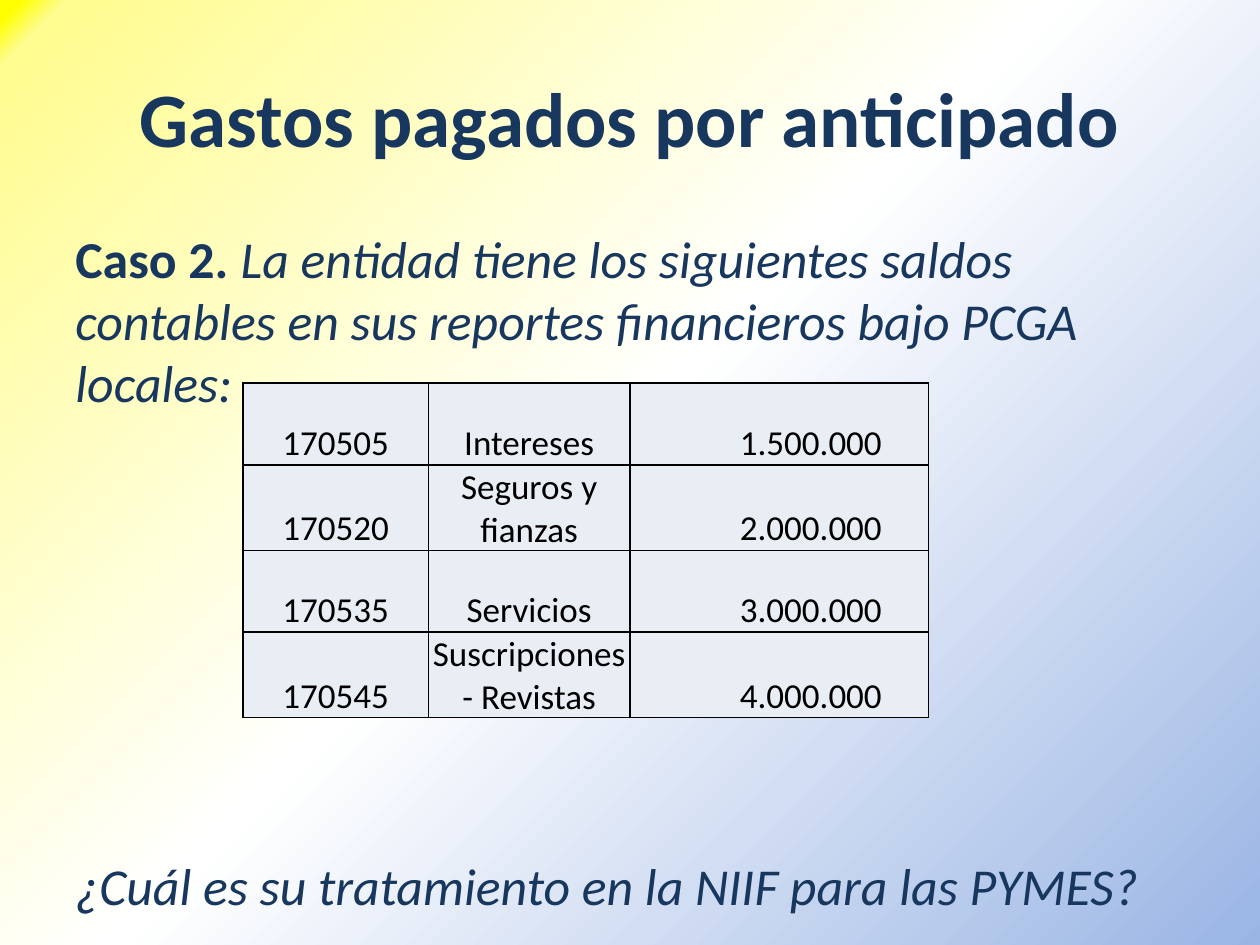
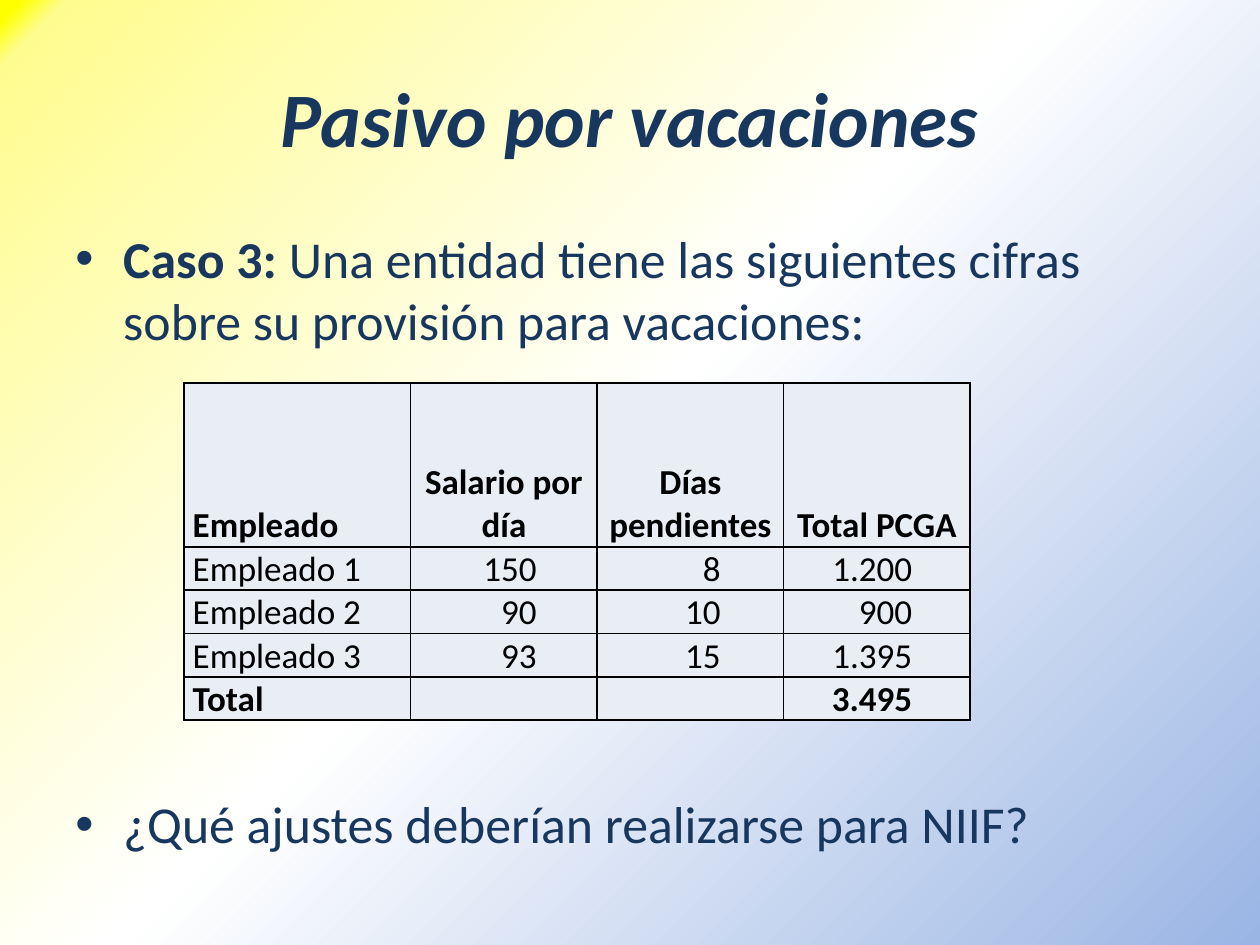
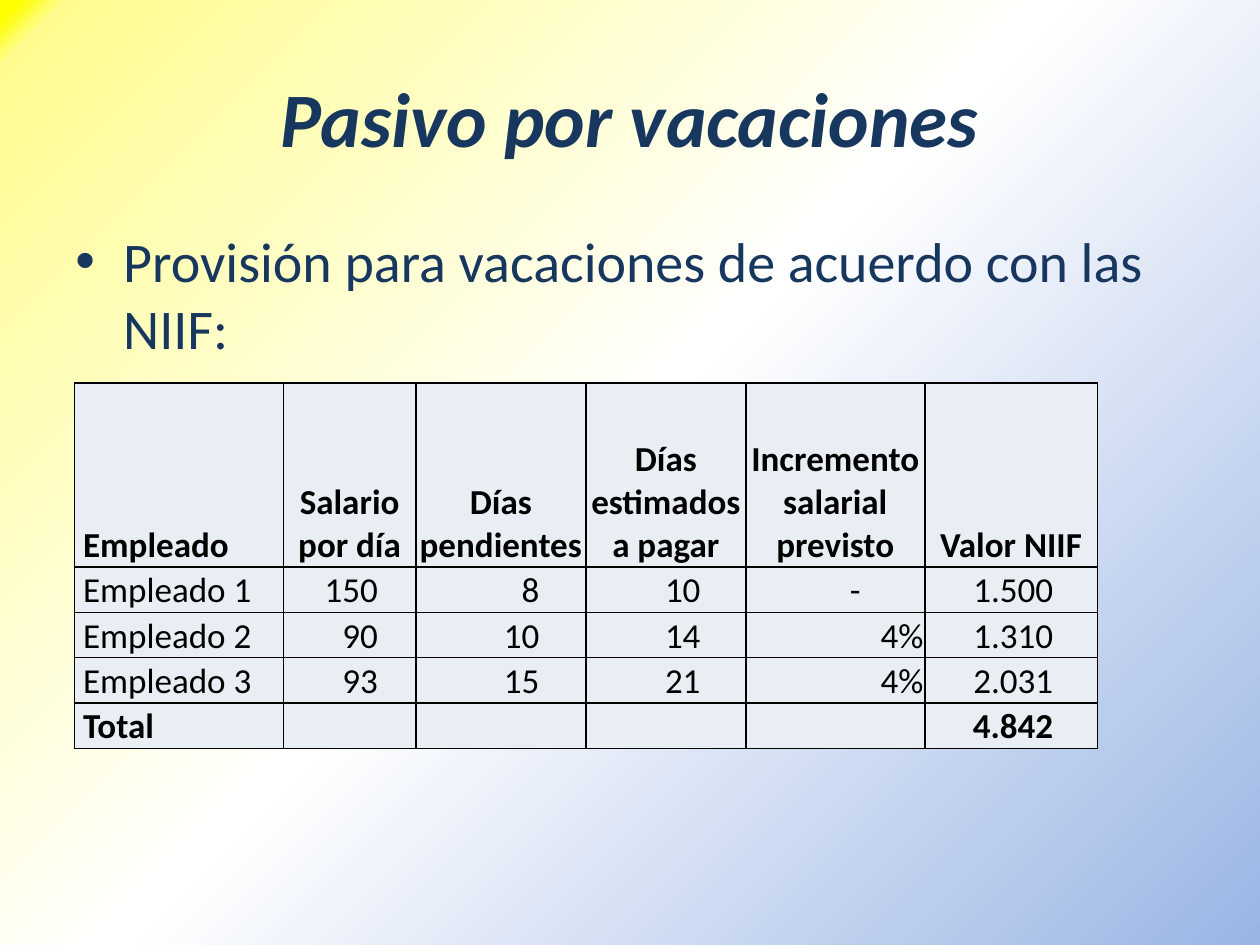
from dataclasses import dataclass
from typing import NamedTuple

from lxml.etree import SubElement
from pptx import Presentation
from pptx.dml.color import RGBColor
from pptx.enum.text import MSO_ANCHOR, PP_ALIGN
from pptx.oxml.ns import qn
from pptx.util import Inches, Pt

FONT = "Calibri"
NAVY = RGBColor(0x17, 0x37, 0x5E)
BLACK = RGBColor(0x00, 0x00, 0x00)
CELL_FILL = RGBColor(0xE9, 0xED, 0xF4)
YELLOW = RGBColor(0xFF, 0xFF, 0x00)
PALE_YELLOW = RGBColor(0xFF, 0xFC, 0x8F)
WHITE = RGBColor(0xFF, 0xFF, 0xFF)
SKY = RGBColor(0x9A, 0xB5, 0xE4)
BACKGROUND_STOPS = [(1, YELLOW), (3, PALE_YELLOW), (48, WHITE), (100, SKY)]
TABLE_TOP = 3.04
CELL_MARGIN = 0.01
LABEL_INDENT = 0.07
BULLET_INDENT = Inches(0.38)
QUESTION_GAP = Pt(252)


class Span(NamedTuple):
    text: str
    bold: bool = False
    italic: bool = False


class Column(NamedTuple):
    width: float
    align: PP_ALIGN = PP_ALIGN.CENTER
    margin: float = CELL_MARGIN


@dataclass
class Grid:
    left: float
    columns: list[Column]
    row_heights: list[float]
    rows: list[list[str]]
    has_header: bool = True


@dataclass
class CaseSlide:
    title: Span
    paragraphs: list[list[Span]]
    grid: Grid
    body_size: float = 29.6
    body_width: float = 9
    body_height: float = 4.95
    bulleted: bool = True


def label(width: float) -> Column:
    return Column(width, PP_ALIGN.LEFT, LABEL_INDENT)


def number(width: float, margin: float) -> Column:
    return Column(width, PP_ALIGN.RIGHT, margin)


VACATION_TITLE = Span("Pasivo por vacaciones", bold=True, italic=True)
CASES = [
    CaseSlide(
        Span("Gastos pagados por anticipado", bold=True),
        [
            [
                Span("Caso 2. ", bold=True),
                Span(
                    "La entidad tiene los siguientes saldos contables en sus "
                    "reportes financieros bajo PCGA locales:",
                    italic=True,
                ),
            ],
            [Span("¿Cuál es su tratamiento en la NIIF para las PYMES?", italic=True)],
        ],
        Grid(
            1.93,
            [Column(1.47), Column(1.6), number(2.37, 0.37)],
            [0.65] * 4,
            [
                ["170505", "Intereses", "1.500.000"],
                ["170520", "Seguros y fianzas", "2.000.000"],
                ["170535", "Servicios", "3.000.000"],
                ["170545", "Suscripciones - Revistas", "4.000.000"],
            ],
            has_header=False,
        ),
        body_width=9.07,
        body_height=5.31,
        bulleted=False,
    ),
    CaseSlide(
        VACATION_TITLE,
        [
            [
                Span("Caso 3: ", bold=True),
                Span("Una entidad tiene las siguientes cifras sobre su provisión para vacaciones:"),
            ],
            [Span("¿Qué ajustes deberían realizarse para NIIF?")],
        ],
        Grid(
            1.46,
            [label(1.8), number(1.48, 0.48), number(1.48, 0.5), number(1.48, 0.46)],
            [1.3] + [0.32] * 4,
            [
                ["Empleado", "Salario por día", "Días pendientes", "Total PCGA"],
                ["Empleado 1", "150", "8", "1.200"],
                ["Empleado 2", "90", "10", "900"],
                ["Empleado 3", "93", "15", "1.395"],
                ["Total", "", "", "3.495"],
            ],
        ),
    ),
    CaseSlide(
        VACATION_TITLE,
        [[Span("Provisión para vacaciones de acuerdo con las NIIF:")]],
        Grid(
            0.59,
            [
                label(1.66),
                number(1.05, 0.3),
                number(1.35, 0.37),
                number(1.27, 0.36),
                number(1.42, 0.51),
                number(1.37, 0.35),
            ],
            [1.46] + [0.36] * 4,
            [
                [
                    "Empleado",
                    "Salario por día",
                    "Días pendientes",
                    "Días estimados a pagar",
                    "Incremento salarial previsto",
                    "Valor NIIF",
                ],
                ["Empleado 1", "150", "8", "10", "-", "1.500"],
                ["Empleado 2", "90", "10", "14", "4%", "1.310"],
                ["Empleado 3", "93", "15", "21", "4%", "2.031"],
                ["Total", "", "", "", "", "4.842"],
            ],
        ),
        body_size=32,
    ),
]


def set_background(master) -> None:
    fill = master.background.fill
    fill.gradient()
    fill.gradient_angle = 315
    stops = master.element.find(".//" + qn("p:bg")).find(".//" + qn("a:gsLst"))
    for stop in list(stops):
        stops.remove(stop)
    for position, color in BACKGROUND_STOPS:
        stop = SubElement(stops, qn("a:gs"), pos=str(position * 1000))
        SubElement(stop, qn("a:srgbClr"), val=str(color))


def style_font(font, size: float, color: RGBColor, bold: bool, italic: bool = False) -> None:
    font.name = FONT
    font.size = Pt(size)
    font.color.rgb = color
    font.bold = bold
    font.italic = italic


def add_spans(paragraph, spans: list[Span], size: float) -> None:
    for span in spans:
        run = paragraph.add_run()
        run.text = span.text
        style_font(run.font, size, NAVY, span.bold, span.italic)


def add_text_frame(slide, top: float, width: float, height: float):
    shape = slide.shapes.add_textbox(Inches(0.5), Inches(top), Inches(width), Inches(height))
    shape.text_frame.word_wrap = True
    return shape.text_frame


def add_title(slide, title: Span) -> None:
    text_frame = add_text_frame(slide, 0.3, 9, 1.25)
    text_frame.vertical_anchor = MSO_ANCHOR.MIDDLE
    paragraph = text_frame.paragraphs[0]
    paragraph.alignment = PP_ALIGN.CENTER
    add_spans(paragraph, [title], 44)


def add_bullet(paragraph) -> None:
    properties = paragraph._p.get_or_add_pPr()
    properties.set("marL", str(BULLET_INDENT))
    properties.set("indent", str(-BULLET_INDENT))
    SubElement(properties, qn("a:buFont"), typeface="Arial")
    SubElement(properties, qn("a:buChar"), char="•")


def add_body(slide, case: CaseSlide) -> None:
    text_frame = add_text_frame(slide, 1.75, case.body_width, case.body_height)
    for index, spans in enumerate(case.paragraphs):
        paragraph = text_frame.add_paragraph() if index else text_frame.paragraphs[0]
        if case.bulleted:
            add_bullet(paragraph)
        if index:
            paragraph.space_before = QUESTION_GAP
        add_spans(paragraph, spans, case.body_size)


def add_borders(cell) -> None:
    properties = cell._tc.get_or_add_tcPr()
    for side in ("a:lnL", "a:lnR", "a:lnT", "a:lnB"):
        line = SubElement(properties, qn(side), w=str(Pt(1)))
        fill = SubElement(line, qn("a:solidFill"))
        SubElement(fill, qn("a:srgbClr"), val=str(BLACK))


def fill_cell(cell, text: str, column: Column, bold: bool) -> None:
    add_borders(cell)
    cell.fill.solid()
    cell.fill.fore_color.rgb = CELL_FILL
    cell.vertical_anchor = MSO_ANCHOR.BOTTOM
    is_left = column.align == PP_ALIGN.LEFT
    cell.margin_left = Inches(column.margin if is_left else CELL_MARGIN)
    cell.margin_right = Inches(CELL_MARGIN if is_left else column.margin)
    cell.margin_top = Inches(CELL_MARGIN)
    cell.margin_bottom = 0
    paragraph = cell.text_frame.paragraphs[0]
    paragraph.text = text
    paragraph.alignment = column.align
    for run in paragraph.runs:
        style_font(run.font, 20, BLACK, bold)


def add_grid(slide, grid: Grid) -> None:
    width = sum(column.width for column in grid.columns)
    frame = slide.shapes.add_table(
        len(grid.rows), len(grid.columns),
        Inches(grid.left), Inches(TABLE_TOP), Inches(width), Inches(sum(grid.row_heights)),
    )
    table = frame.table
    table.first_row = False
    table.horz_banding = False
    for index, column in enumerate(grid.columns):
        table.columns[index].width = Inches(column.width)
    for row_index, texts in enumerate(grid.rows):
        table.rows[row_index].height = Inches(grid.row_heights[row_index])
        is_header = grid.has_header and row_index == 0
        for column_index, text in enumerate(texts):
            column = grid.columns[column_index]
            if is_header and column.align == PP_ALIGN.RIGHT:
                column = Column(column.width)
            elif text.endswith("%"):
                column = number(column.width, CELL_MARGIN)
            bold = is_header or texts[0] == "Total"
            fill_cell(table.cell(row_index, column_index), text, column, bold)


def main() -> None:
    presentation = Presentation()
    presentation.slide_width = Inches(10)
    presentation.slide_height = Inches(7.5)
    set_background(presentation.slide_master)
    for case in CASES:
        slide = presentation.slides.add_slide(presentation.slide_layouts[6])
        add_title(slide, case.title)
        add_body(slide, case)
        add_grid(slide, case.grid)
    presentation.save("out.pptx")


if __name__ == "__main__":
    main()
